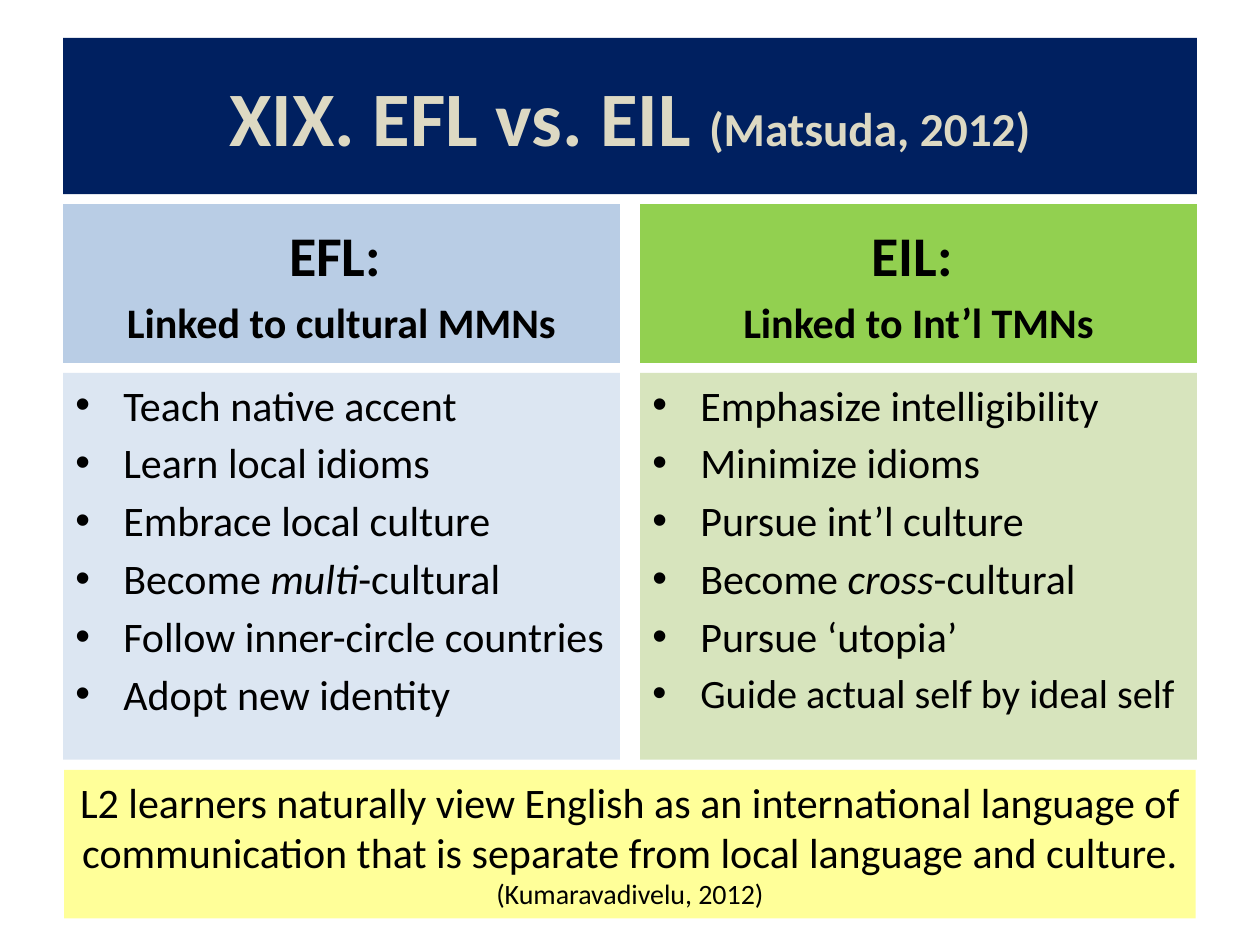
from lxml.etree import SubElement
from pptx import Presentation
from pptx.dml.color import RGBColor
from pptx.enum.shapes import MSO_SHAPE
from pptx.enum.text import MSO_ANCHOR, MSO_AUTO_SIZE, PP_ALIGN
from pptx.oxml.ns import qn
from pptx.util import Pt

PIXEL = 9144
FONT = "Calibri"
LEFT, WIDTH = 50, 900
COLUMN_WIDTH, COLUMN_GAP = 442, 16
HEADER_HEIGHT, ROW_GAP, LIST_HEIGHT = 126, 8, 307
BULLET_INDENT = 38

COLUMNS = [
    {
        "heading": "EFL: ",
        "subheading": "Linked to cultural MMNs",
        "fills": ("B9CDE5", "DCE6F2"),
        "items": [
            [("Teach native accent", {})],
            [("Learn local idioms", {})],
            [("Embrace local culture", {})],
            [("Become ", {}), ("multi", {"italic": True}), ("-cultural", {})],
            [("Follow inner-circle countries", {})],
            [("Adopt new identity", {})],
        ],
    },
    {
        "heading": "EIL: ",
        "subheading": "Linked to Int’l TMNs",
        "fills": ("92D050", "D7E4BD"),
        "items": [
            [("Emphasize intelligibility", {})],
            [("Minimize idioms", {})],
            [("Pursue int’l culture", {})],
            [("Become ", {}), ("cross", {"italic": True}), ("-cultural", {})],
            [("Pursue ‘utopia’", {})],
            [("Guide actual self by ideal self", {"size": 23})],
        ],
    },
]


def px(length):
    return length * PIXEL


def color(value):
    return RGBColor.from_string(value)


def add_text(paragraph, text, size=24, fill="000000", bold=False, italic=False):
    run = paragraph.add_run()
    run.text = text
    font = run.font
    font.name = FONT
    font.size = Pt(size)
    font.bold = bold
    font.italic = italic
    font.color.rgb = color(fill)


def format_frame(shape, fill, anchor):
    shape.fill.solid()
    shape.fill.fore_color.rgb = color(fill)
    frame = shape.text_frame
    frame.word_wrap = True
    frame.auto_size = MSO_AUTO_SIZE.NONE
    frame.vertical_anchor = anchor
    return frame


def add_panel(slide, box, fill, anchor=MSO_ANCHOR.TOP):
    shape = slide.shapes.add_shape(MSO_SHAPE.RECTANGLE, *map(px, box))
    shape.shadow.inherit = False
    shape.line.fill.background()
    return format_frame(shape, fill, anchor)


def add_paragraph(frame, position, alignment, space_before=0):
    paragraph = frame.add_paragraph() if position else frame.paragraphs[0]
    paragraph.alignment = alignment
    paragraph.space_before = Pt(space_before)
    return paragraph


def add_bullet(paragraph):
    properties = paragraph._p.get_or_add_pPr()
    properties.set("marL", str(px(BULLET_INDENT)))
    properties.set("indent", str(-px(BULLET_INDENT)))
    SubElement(properties, qn("a:buFont"), typeface="Arial")
    SubElement(properties, qn("a:buChar"), char="•")


def place_title(slide, box):
    title = slide.shapes.title
    title.left, title.top, title.width, title.height = map(px, box)
    frame = format_frame(title, "002060", MSO_ANCHOR.MIDDLE)
    paragraph = add_paragraph(frame, 0, PP_ALIGN.CENTER)
    add_text(paragraph, "XIX. EFL vs. EIL ", size=44, fill="DDD9C3", bold=True)
    add_text(paragraph, "(Matsuda, 2012)", size=27, fill="DDD9C3", bold=True)


def add_column(slide, box, column):
    left, top, width, height = box
    header_fill, list_fill = column["fills"]
    header = add_panel(slide, (left, top, width, HEADER_HEIGHT), header_fill, MSO_ANCHOR.MIDDLE)
    lines = [(column["heading"], 32), (column["subheading"], 24)]
    for position, (text, size) in enumerate(lines):
        paragraph = add_paragraph(header, position, PP_ALIGN.CENTER, size / 5)
        add_text(paragraph, text, size=size, bold=True)

    offset = HEADER_HEIGHT + ROW_GAP
    item_list = add_panel(slide, (left, top + offset, width, height - offset), list_fill)
    for position, item in enumerate(column["items"]):
        paragraph = add_paragraph(item_list, position, PP_ALIGN.LEFT, 4.25)
        add_bullet(paragraph)
        for text, options in item:
            add_text(paragraph, text, **options)


def add_conclusion(slide, box):
    frame = add_panel(slide, box, "FFFF99")
    paragraph = add_paragraph(frame, 0, PP_ALIGN.CENTER)
    add_text(
        paragraph,
        "L2 learners naturally view English as an international language of "
        "communication that is separate from local language and culture. ",
    )
    add_text(paragraph, "(Kumaravadivelu, 2012)", size=16)


def main():
    presentation = Presentation()
    presentation.slide_width = px(1000)
    presentation.slide_height = px(750)
    slide = presentation.slides.add_slide(presentation.slide_layouts[5])

    place_title(slide, (LEFT, 30, WIDTH, 124))
    column_height = HEADER_HEIGHT + ROW_GAP + LIST_HEIGHT
    for index, column in enumerate(COLUMNS):
        left = LEFT + index * (COLUMN_WIDTH + COLUMN_GAP)
        add_column(slide, (left, 162, COLUMN_WIDTH, column_height), column)
    add_conclusion(slide, (LEFT + 1, 611, WIDTH - 2, 118))

    presentation.save("out.pptx")


if __name__ == "__main__":
    main()
